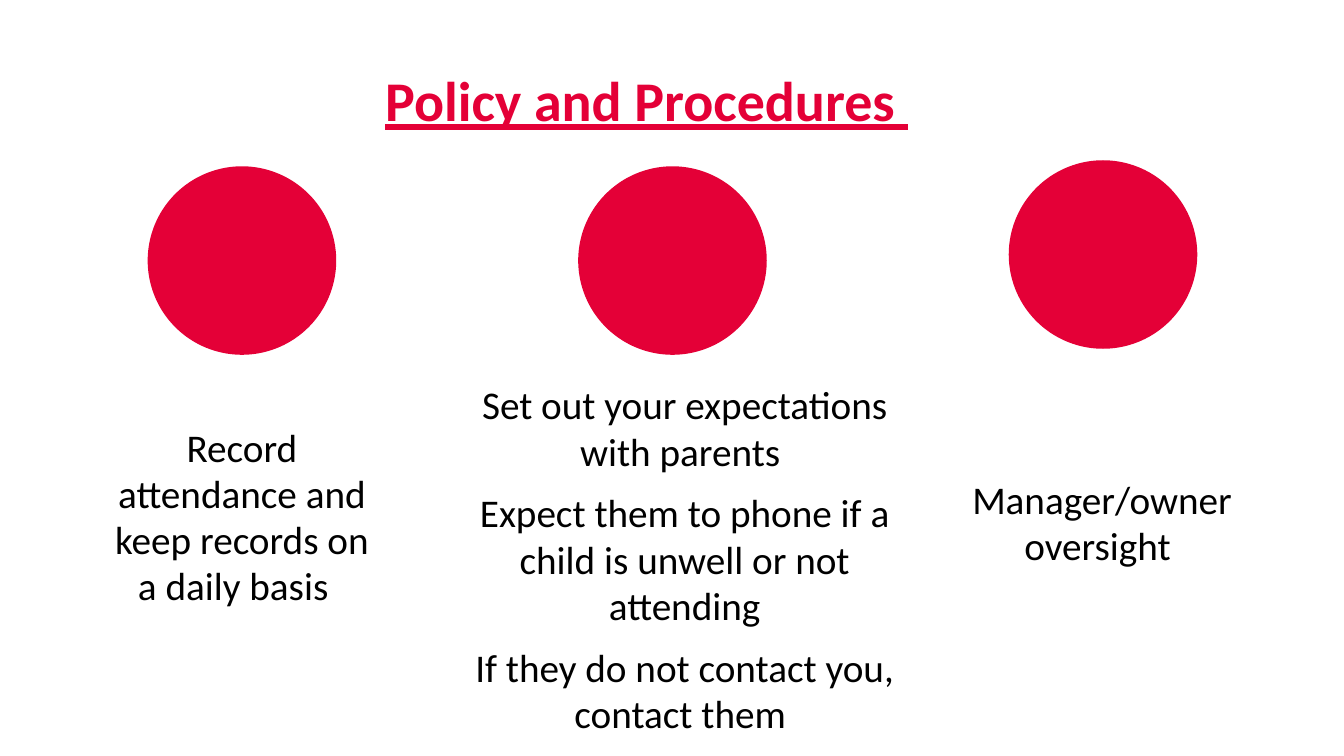
from pptx import Presentation
from pptx.dml.color import RGBColor
from pptx.enum.shapes import MSO_SHAPE
from pptx.enum.text import MSO_ANCHOR, MSO_AUTO_SIZE, PP_ALIGN
from pptx.util import Inches, Pt

RED = RGBColor(0xE4, 0x00, 0x37)
BLACK = RGBColor(0x00, 0x00, 0x00)
OVAL = MSO_SHAPE.OVAL
TOP = MSO_ANCHOR.TOP
NO_FIT = MSO_AUTO_SIZE.NONE
LEFT = PP_ALIGN.LEFT
CENTER = PP_ALIGN.CENTER

TITLE_ONLY_LAYOUT = 5
CIRCLE_SIZE = 1.87
FIRST_CENTER = 2.4
COLUMN_STEP = 4.27

COLUMNS = [
    (1.65, (1.03, 4.22, 2.74, 1.87),
     ["Record attendance and keep records on a daily basis  "]),
    (1.65, (4.58, 3.8, 4.42, 3.17),
     ["Set out your expectations with parents ",
      "Expect them to phone if a child is unwell or not attending",
      "If they do not contact you, contact them "]),
    (1.59, (9.56, 4.74, 2.74, 1.16),
     ["Manager/owner oversight "]),
]


class SlideBuilder:
    font_name = "Calibri"

    def __init__(self, slide):
        self.slide = slide

    def prepare_frame(self, shape):
        frame = shape.text_frame
        frame.word_wrap = True
        frame.auto_size = NO_FIT
        frame.vertical_anchor = TOP
        frame.margin_left = frame.margin_right = 0
        frame.margin_top = frame.margin_bottom = 0
        return frame

    def format_paragraph(self, paragraph, size, color, alignment):
        paragraph.alignment = alignment
        paragraph.font.name = self.font_name
        paragraph.font.size = Pt(size)
        paragraph.font.color.rgb = color

    def title(self, text, left, top, width, height):
        shape = self.slide.shapes.title
        shape.left, shape.top = Inches(left), Inches(top)
        shape.width, shape.height = Inches(width), Inches(height)
        frame = self.prepare_frame(shape)
        frame.text = text
        paragraph = frame.paragraphs[0]
        self.format_paragraph(paragraph, 40, RED, LEFT)
        paragraph.font.bold = True
        paragraph.font.underline = True

    def circle(self, center, top):
        shape = self.slide.shapes.add_shape(
            OVAL, Inches(center - CIRCLE_SIZE / 2), Inches(top),
            Inches(CIRCLE_SIZE), Inches(CIRCLE_SIZE))
        shape.shadow.inherit = False
        shape.fill.solid()
        shape.fill.fore_color.rgb = RED
        shape.line.fill.background()

    def text(self, lines, box):
        shape = self.slide.shapes.add_textbox(*map(Inches, box))
        frame = self.prepare_frame(shape)
        frame.text = "\n".join(lines)
        for paragraph in frame.paragraphs:
            self.format_paragraph(paragraph, 28, BLACK, CENTER)
            paragraph.line_spacing = 0.98
            paragraph.space_after = Pt(11.3)


def main():
    presentation = Presentation()
    presentation.slide_width = Inches(13.33)
    presentation.slide_height = Inches(7.5)
    layout = presentation.slide_layouts[TITLE_ONLY_LAYOUT]
    builder = SlideBuilder(presentation.slides.add_slide(layout))
    builder.title("Policy and Procedures ", 3.82, 0.65, 8.1, 1.16)
    for index, (circle_top, text_box, lines) in enumerate(COLUMNS):
        builder.circle(FIRST_CENTER + index * COLUMN_STEP, circle_top)
        builder.text(lines, text_box)
    presentation.save("out.pptx")


if __name__ == "__main__":
    main()
